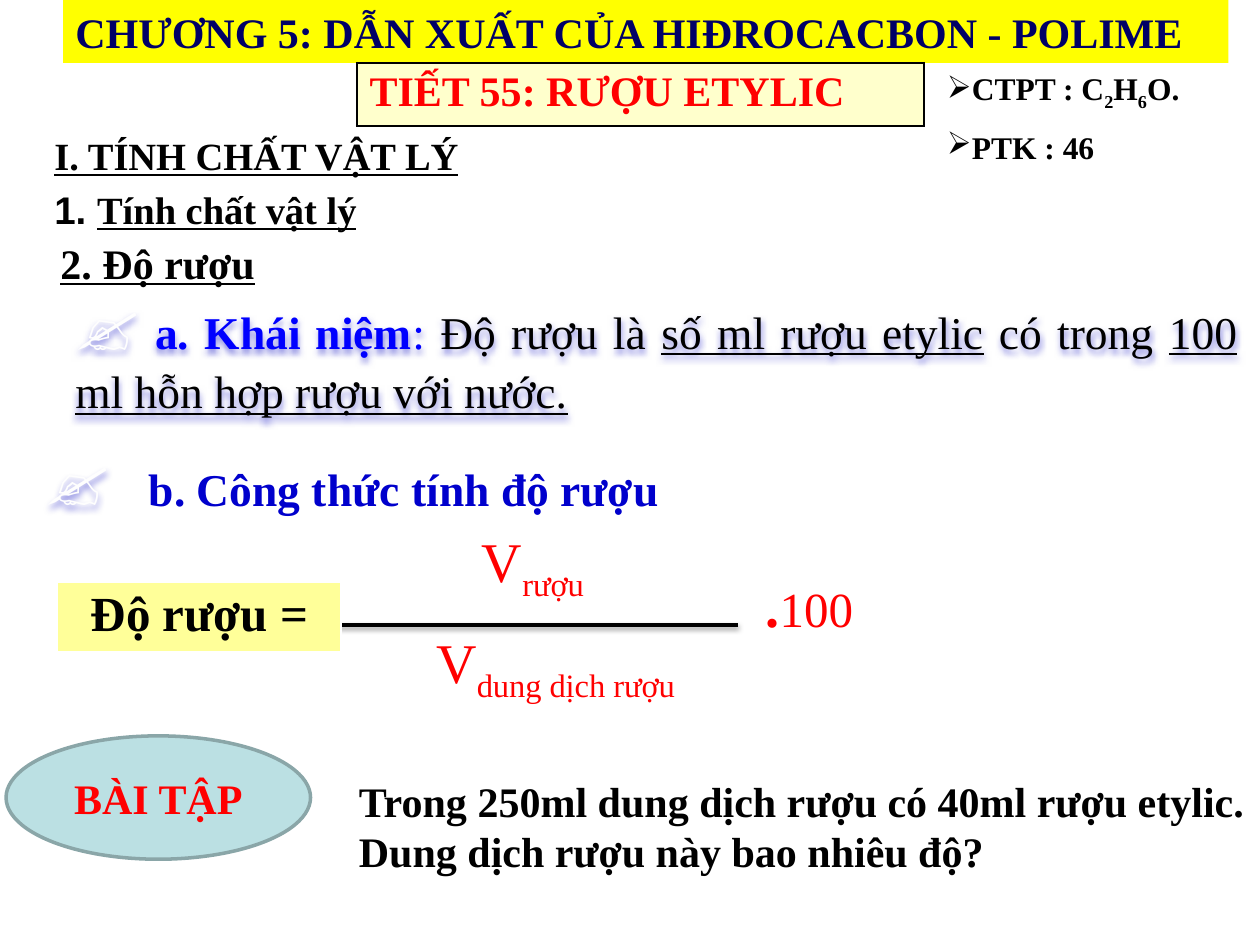
from dataclasses import dataclass

from lxml.etree import SubElement
from pptx import Presentation
from pptx.dml.color import RGBColor
from pptx.enum.shapes import MSO_CONNECTOR, MSO_SHAPE
from pptx.enum.text import MSO_ANCHOR, PP_ALIGN
from pptx.oxml import parse_xml
from pptx.oxml.ns import nsdecls, qn
from pptx.util import Pt


@dataclass(frozen=True)
class Theme:
    black: str = "000000"
    white: str = "FFFFFF"
    red: str = "FF0000"
    navy: str = "000066"
    blue: str = "0000FF"
    heading_blue: str = "0000CC"
    symbol: str = "FEFEFE"
    symbol_outline: str = "C00000"
    glow: str = "3333CC"
    banner: str = "FFFF00"
    cream: str = "FFFFCC"
    lemon: str = "FFFF99"
    oval: str = "BBE0E3"
    oval_line: str = "8AA6A8"
    serif: str = "Times New Roman"
    sans: str = "Arial"
    small: int = 18
    list_size: int = 22
    body: int = 24
    lead: int = 26
    formula: int = 28
    variable: int = 32
    icon: int = 40


THEME = Theme()


def rgb(code):
    return RGBColor.from_string(code)


def add_span(para, text, size, color=THEME.black, bold=False, underline=False,
             font=THEME.serif, subscript=False, outline=None):
    span = para.add_run()
    span.text = text
    face = span.font
    face.name, face.size, face.bold, face.underline = font, Pt(size), bold, underline
    face.color.rgb = rgb(color)
    properties = span._r.get_or_add_rPr()
    if subscript:
        properties.set("baseline", "-25000")
    if outline:
        properties.set("spc", "50")
        properties.insert(0, parse_xml(
            f'<a:ln {nsdecls("a")} w="12700"><a:solidFill><a:srgbClr val="{outline}"/>'
            '</a:solidFill></a:ln>'))


def add_text(page, box, align=PP_ALIGN.LEFT, anchor=MSO_ANCHOR.TOP, wrap=True):
    shape = page.shapes.add_textbox(*map(Pt, box))
    frame = shape.text_frame
    frame.word_wrap = wrap
    frame.vertical_anchor = anchor
    frame.paragraphs[0].alignment = align
    return shape


def add_effect(shape, blur=0, distance=0, alpha=0, color=None):
    """Give the shape a downward shadow, or an empty effect list."""
    effects = SubElement(shape._element.spPr, qn("a:effectLst"))
    if color:
        effects.append(parse_xml(
            f'<a:outerShdw {nsdecls("a")} blurRad="{Pt(blur)}" dist="{Pt(distance)}" '
            f'dir="5400000" rotWithShape="0"><a:srgbClr val="{color}">'
            f'<a:alpha val="{alpha * 1000}"/></a:srgbClr></a:outerShdw>'))


def add_cell_table(page, box, fill, borders):
    """Place a one-cell table; borders maps L, R, T, B to (colour, width)."""
    table = page.shapes.add_table(1, 1, *map(Pt, box)).table
    table.first_row = table.horz_banding = False
    cell = table.cell(0, 0)
    cell.fill.solid()
    cell.fill.fore_color.rgb = rgb(fill)
    properties = cell._tc.get_or_add_tcPr()
    for index, side in enumerate("LRTB"):
        color, width = borders[side]
        properties.insert(index, parse_xml(
            f'<a:ln{side} {nsdecls("a")} w="{Pt(width)}"><a:solidFill>'
            f'<a:srgbClr val="{color}"/></a:solidFill></a:ln{side}>'))
    return cell.text_frame.paragraphs[0]


def add_filled_shape(page, kind, box, fill, line=None):
    shape = page.shapes.add_shape(kind, *map(Pt, box))
    shape.shadow.inherit = False
    shape.fill.solid()
    shape.fill.fore_color.rgb = rgb(fill)
    if line:
        shape.line.color.rgb = rgb(line)
        shape.line.width = Pt(2)
    else:
        shape.line.fill.background()
    shape.text_frame.word_wrap = True
    return shape.text_frame


def add_writing_hand(para):
    add_span(para, "✍", THEME.icon, THEME.symbol, outline=THEME.symbol_outline)


def add_header(page, box):
    left, top, width, height = box
    # Chapter banner
    frame = add_filled_shape(page, MSO_SHAPE.RECTANGLE, box, THEME.banner)
    frame.vertical_anchor = MSO_ANCHOR.TOP
    para = frame.paragraphs[0]
    para.alignment = PP_ALIGN.LEFT
    add_span(para, "CHƯƠNG 5: DẪN XUẤT CỦA HIĐROCACBON - POLIME",
             THEME.body, THEME.navy, bold=True)
    # Lesson title
    para = add_cell_table(page, (left + 168, top + height, 324, 36), THEME.cream,
                          dict.fromkeys("LRTB", (THEME.black, 1.5)))
    add_span(para, "TIẾT 55: RƯỢU ETYLIC", THEME.body, THEME.red, bold=True)


def add_formula_facts(page, box):
    frame = add_text(page, box).text_frame
    facts = [[("CTPT : C", False), ("2", True), ("H", False), ("6", True), ("O.", False)],
             [("PTK : 46", False)]]
    for index, fact in enumerate(facts):
        para = frame.add_paragraph() if index else frame.paragraphs[0]
        para.space_before = Pt(9)
        bullet = SubElement(para._p.get_or_add_pPr(), qn("a:buChar"))
        bullet.set("char", "➢")
        for text, subscript in fact:
            add_span(para, text, THEME.small, bold=True, subscript=subscript)


def add_outline(page, box):
    left, top, width, height = box
    frame = add_text(page, box).text_frame
    first, second = frame.paragraphs[0], frame.add_paragraph()
    add_span(first, "I. TÍNH CHẤT VẬT LÝ", THEME.list_size, bold=True, underline=True)
    add_span(second, "1. ", THEME.list_size, bold=True, font=THEME.sans)
    add_span(second, "Tính chất vật lý", THEME.list_size, bold=True, underline=True)
    for para in (first, second):
        para.space_before = Pt(4.4)
    heading = add_text(page, (left + 3.5, top + 60, 127, 36.5), wrap=False)
    add_span(heading.text_frame.paragraphs[0], "2. Độ rượu", THEME.body,
             bold=True, underline=True)


def add_definition(page, box):
    shape = add_text(page, box, PP_ALIGN.JUSTIFY)
    add_effect(shape, 4, 2, 60, THEME.glow)
    para = shape.text_frame.paragraphs[0]
    add_writing_hand(para)
    add_span(para, " ", THEME.lead)
    add_span(para, "a. Khái niệm", THEME.lead, THEME.blue, bold=True)
    add_span(para, ": ", THEME.lead, THEME.blue)
    for text, underline in (("Độ rượu là ", False), ("số ml rượu etylic", True),
                            (" có trong ", False),
                            ("100 ml hỗn hợp rượu với nước.", True)):
        add_span(para, text, THEME.lead, underline=underline)


def add_formula_heading(page, box):
    left, top, width, height = box
    icon = add_text(page, (left, top, 34, height))
    add_effect(icon, 4, 2, 60, THEME.glow)
    add_writing_hand(icon.text_frame.paragraphs[0])
    heading = add_text(page, (left + 59, top + 15, width - 59, 39))
    add_span(heading.text_frame.paragraphs[0], "b. Công thức tính độ rượu",
             THEME.lead, THEME.heading_blue, bold=True)


def add_formula(page, box):
    left, top, width, height = box
    # Numerator and denominator
    for name, part in (("rượu", (left + 148.5, top, 246, 56)),
                       ("dung dịch rượu", (left + 160.5, top + 69, 248, 34))):
        frame = add_text(page, part, PP_ALIGN.CENTER, MSO_ANCHOR.MIDDLE).text_frame
        para = frame.paragraphs[0]
        add_span(para, "V", THEME.variable, THEME.red)
        add_span(para, name, THEME.variable, THEME.red, subscript=True)
    # Fraction bar
    bar = page.shapes.add_connector(MSO_CONNECTOR.STRAIGHT, *map(
        Pt, (left + 155, top + 62.5, left + 389, top + 62.5)))
    bar.line.color.rgb = rgb(THEME.black)
    bar.line.width = Pt(2)
    add_effect(bar, 3.1, 1.6, 38, THEME.black)
    # Multiplier
    frame = add_text(page, (left + 388, top + 23, 90, 56), PP_ALIGN.CENTER,
                     MSO_ANCHOR.MIDDLE).text_frame
    para = frame.paragraphs[0]
    add_span(para, ".", THEME.variable, THEME.red, bold=True)
    add_span(para, "100 ", THEME.formula, THEME.red)
    # Left-hand side
    borders = dict.fromkeys("LRT", (THEME.white, 1)) | {"B": (THEME.white, 3)}
    para = add_cell_table(page, (left, top + 38, 162, 41), THEME.lemon, borders)
    para.alignment = PP_ALIGN.CENTER
    add_span(para, "Độ rượu =", THEME.formula, bold=True)


def add_exercise(page, box):
    left, top, width, height = box
    frame = add_filled_shape(page, MSO_SHAPE.OVAL, (left, top, 174, 70.5),
                             THEME.oval, THEME.oval_line)
    frame.vertical_anchor = MSO_ANCHOR.MIDDLE
    para = frame.paragraphs[0]
    para.alignment = PP_ALIGN.CENTER
    add_span(para, "BÀI TẬP", THEME.body, THEME.red, bold=True)
    question = add_text(page, (left + 194.5, top + 19, width - 194.5, 65.5))
    add_span(question.text_frame.paragraphs[0],
             "Trong 250ml dung dịch rượu có 40ml rượu etylic. "
             "Dung dịch rượu này bao nhiêu độ?", THEME.body, bold=True)


def main():
    deck = Presentation()
    deck.slide_width, deck.slide_height = Pt(720), Pt(540)
    page = deck.slides.add_slide(deck.slide_layouts[6])
    add_exercise(page, (3.5, 420.5, 715, 84.5))
    add_formula(page, (33, 294.5, 478, 103))
    add_header(page, (36, 0, 666, 36))
    add_formula_facts(page, (534, 36, 168, 62))
    add_outline(page, (24, 72, 348, 72))
    add_definition(page, (36, 156, 678, 87))
    add_formula_heading(page, (19, 245, 395, 55.5))
    deck.save("out.pptx")


if __name__ == "__main__":
    main()
